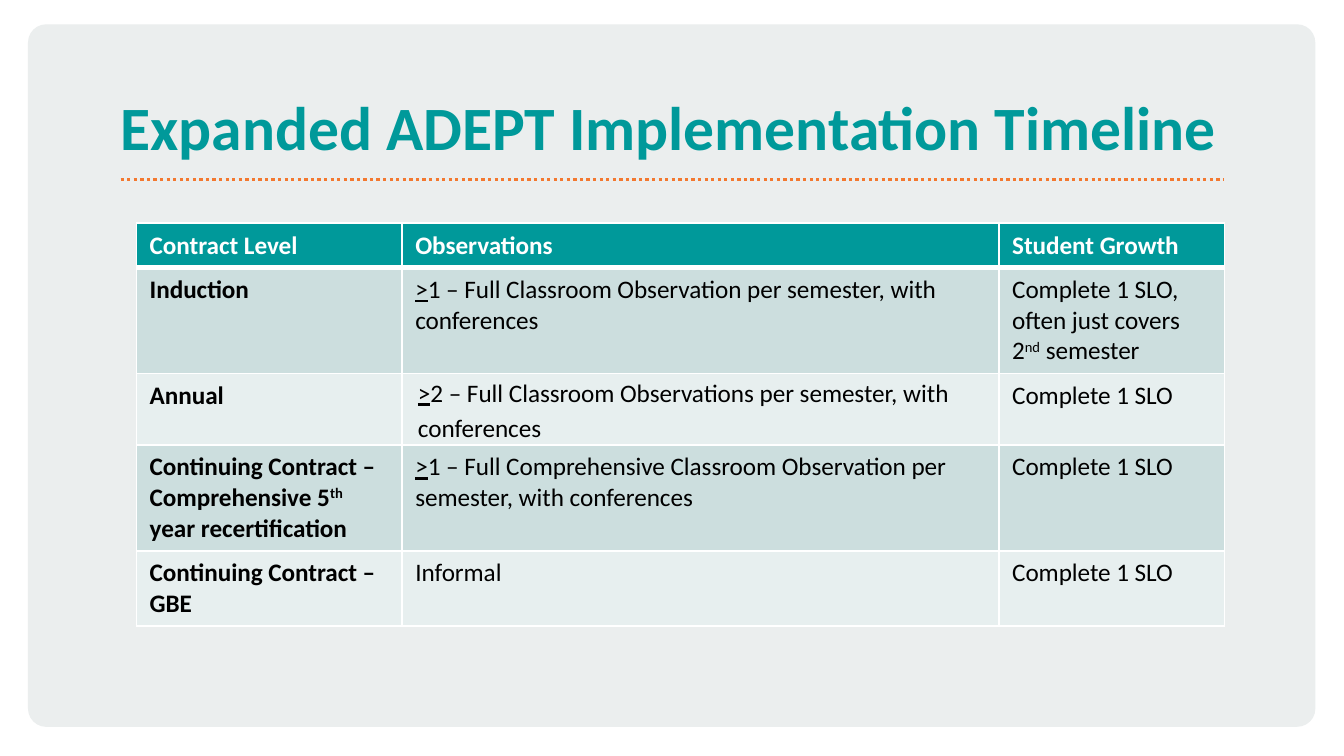
from lxml import etree
from pptx import Presentation
from pptx import util as u
from pptx.dml.color import RGBColor
from pptx.enum import dml, shapes, text
from pptx.oxml.ns import qn

FONT = "Calibri"
TEAL, WHITE, BLACK = "00999A", "FFFFFF", "000000"
PANEL, ORANGE = "EBEEEE", "F3782F"
BANDS = ["CCDEDE", "E7EFEF"]

COLUMN_WIDTHS = [5.02, 11.28, 4.26]
ROW_HEIGHTS = [0.82, 1.98, 1.35, 1.98, 1.42]
HEADERS = ["Contract Level", "Observations", "Student Growth"]

# A cell is a list of paragraphs, a paragraph a list of (text, style) runs
GROWTH = [[("Complete 1 SLO", "")]]
ROWS = [
    [
        [[("Induction", "")]],
        [[(">", "underline"),
          ("1 – Full Classroom Observation per semester, with conferences", "")]],
        [[("Complete 1 SLO, often just covers 2", ""), ("nd", "superscript"),
          (" semester", "")]],
    ],
    [
        [[("Annual", "")]],
        [[(">", "underline"),
          ("2 – Full Classroom Observations per semester, with conferences", "")]],
        GROWTH,
    ],
    [
        [[("Continuing Contract –", "")],
         [("Comprehensive 5", ""), ("th", "superscript"),
          (" year recertification", "")]],
        [[(">", "underline"),
          ("1 – Full Comprehensive Classroom Observation per semester, "
           "with conferences", "")]],
        GROWTH,
    ],
    [[[("Continuing Contract – GBE", "")]], [[("Informal", "")]], GROWTH],
]


def color(hex_value):
    return RGBColor.from_string(hex_value)


def add_run(paragraph, words, size, hex_value, bold=False, style=""):
    run = paragraph.add_run()
    run.text = words
    run.font.name = FONT
    run.font.size = u.Pt(size)
    run.font.bold = bold
    run.font.color.rgb = color(hex_value)
    if style == "underline":
        run.font.underline = True
    elif style == "superscript":
        run.font._element.set("baseline", "30000")


def add_panel(slide):
    panel = slide.shapes.add_shape(
        shapes.MSO_SHAPE.ROUNDED_RECTANGLE,
        u.Cm(0.53), u.Cm(0.46), u.Cm(24.33), u.Cm(13.28))
    panel.adjustments[0] = 0.026
    panel.shadow.inherit = False
    panel.fill.solid()
    panel.fill.fore_color.rgb = color(PANEL)
    panel.line.fill.background()


def add_rule(slide):
    rule = slide.shapes.add_connector(
        shapes.MSO_CONNECTOR.STRAIGHT,
        u.Cm(2.28), u.Cm(3.39), u.Cm(23.14), u.Cm(3.39))
    rule.line.color.rgb = color(ORANGE)
    rule.line.width = u.Pt(1.75)
    rule.line.dash_style = dml.MSO_LINE.ROUND_DOT
    etree.SubElement(rule._element.spPr, qn("a:effectLst"))


def set_title(slide, words):
    title = slide.shapes.title
    title.left, title.top = u.Cm(2.28), u.Cm(0.41)
    title.width, title.height = u.Cm(20.85), u.Cm(2.67)
    frame = title.text_frame
    frame.margin_left = frame.margin_right = 0
    frame.margin_top = frame.margin_bottom = 0
    frame.word_wrap = True
    frame.auto_size = text.MSO_AUTO_SIZE.NONE
    frame.vertical_anchor = text.MSO_ANCHOR.BOTTOM
    paragraph = frame.paragraphs[0]
    paragraph.alignment = text.PP_ALIGN.LEFT
    paragraph.line_spacing = 0.85
    add_run(paragraph, words, 33, TEAL, bold=True)


def set_borders(cell, top, bottom):
    """White borders, 1 pt at the sides; top and bottom widths in points."""
    properties = cell._tc.get_or_add_tcPr()
    widths = {"a:lnL": 1, "a:lnR": 1, "a:lnT": top, "a:lnB": bottom}
    for position, (tag, width) in enumerate(widths.items()):
        line = etree.Element(qn(tag), w=str(u.Pt(width)))
        fill = etree.SubElement(line, qn("a:solidFill"))
        etree.SubElement(fill, qn("a:srgbClr"), val=WHITE)
        properties.insert(position, line)


def fill_cell(cell, paragraphs, background, hex_value, bold):
    cell.fill.solid()
    cell.fill.fore_color.rgb = color(background)
    cell.margin_left = cell.margin_right = u.Cm(0.25)
    cell.margin_top = cell.margin_bottom = u.Cm(0.13)
    frame = cell.text_frame
    for index, runs in enumerate(paragraphs):
        paragraph = frame.add_paragraph() if index else frame.paragraphs[0]
        for words, style in runs:
            add_run(paragraph, words, 13.5, hex_value, bold, style)


def add_timeline(slide):
    table = slide.shapes.add_table(
        len(ROW_HEIGHTS), len(COLUMN_WIDTHS), u.Cm(2.58), u.Cm(4.22),
        u.Cm(sum(COLUMN_WIDTHS)), u.Cm(sum(ROW_HEIGHTS))).table
    for column, width in zip(table.columns, COLUMN_WIDTHS):
        column.width = u.Cm(width)
    for row, height in zip(table.rows, ROW_HEIGHTS):
        row.height = u.Cm(height)

    # Header row
    for cell, words in zip(table.rows[0].cells, HEADERS):
        fill_cell(cell, [[(words, "")]], TEAL, WHITE, True)
        set_borders(cell, 1, 3)

    # Contract levels in alternating bands
    for index, contents in enumerate(ROWS):
        for column, paragraphs in enumerate(contents):
            cell = table.cell(index + 1, column)
            fill_cell(cell, paragraphs, BANDS[index % 2], BLACK, column == 0)
            set_borders(cell, 1 if index else 3, 1)

    # The annual observations are set looser, without vertical margins
    annual = table.cell(2, 1)
    annual.margin_left = annual.margin_right = u.Cm(0.3)
    annual.margin_top = annual.margin_bottom = 0
    paragraph = annual.text_frame.paragraphs[0]
    paragraph.line_spacing = 1.15
    paragraph.space_after = u.Pt(10)


def main():
    presentation = Presentation()
    presentation.slide_width = u.Cm(25.4)
    presentation.slide_height = u.Cm(14.29)
    slide = presentation.slides.add_slide(presentation.slide_layouts[5])
    add_panel(slide)
    add_rule(slide)
    set_title(slide, "Expanded ADEPT Implementation Timeline")
    # Title goes in front of the panel
    slide.shapes._spTree.append(slide.shapes.title._element)
    add_timeline(slide)
    presentation.save("out.pptx")


if __name__ == "__main__":
    main()
